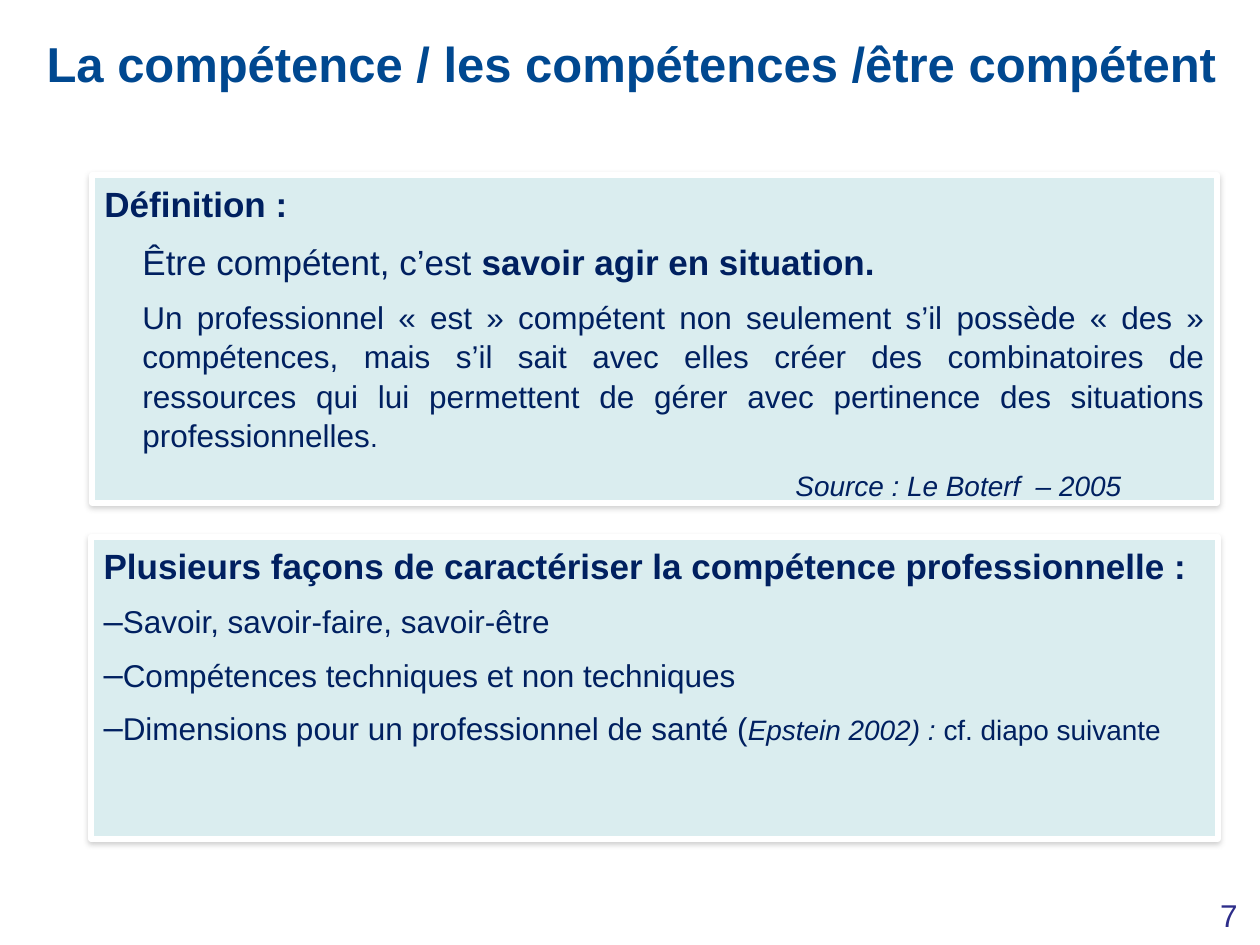
from lxml.etree import SubElement
from pptx import Presentation
from pptx.dml.color import RGBColor
from pptx.enum.shapes import MSO_SHAPE as Shape
from pptx.enum.text import MSO_ANCHOR as Anchor, MSO_AUTO_SIZE as AutoSize, PP_ALIGN as Align
from pptx.oxml.ns import qn
from pptx.util import Emu, Pt

COLORS = {
    "title": "004890",
    "text": "002060",
    "number": "2D2D8A",
    "panel": "DAEDEF",
    "border": "FFFFFF",
    "shadow": "808080",
}
PX = 914400 / 126


def px(length):
    return Emu(round(length * PX))


def color(name):
    return RGBColor.from_string(COLORS[name])


class SlideWriter:
    """Holds the style and the current slide."""

    font = "Arial"
    gap = Pt(8)
    line_spacing = 1.04

    def __init__(self, page):
        self.page = page

    def place(self, box, left, top, width, height):
        box.left, box.top = px(left), px(top)
        box.width, box.height = px(width), px(height)

    def style(self, para, size, color_name, bold=None, align=Align.LEFT):
        para.alignment = align
        font = para.font
        font.name, font.size, font.bold = self.font, Pt(size), bold
        font.color.rgb = color(color_name)

    def title(self, text, *area):
        box = self.page.shapes.title
        self.place(box, *area)
        frame = box.text_frame
        frame.auto_size = AutoSize.NONE
        frame.vertical_anchor = Anchor.MIDDLE
        frame.text = text
        self.style(frame.paragraphs[0], 28, "title", bold=True)

    def page_number(self, text, *area):
        box = self.page.shapes.add_textbox(*map(px, area))
        frame = box.text_frame
        frame.word_wrap = True
        frame.text = text
        self.style(frame.paragraphs[0], 18, "number", align=Align.RIGHT)

    def shadow(self, box):
        """Give the box a soft grey shadow straight below it."""
        box.shadow.inherit = False
        effects = box._element.spPr.find(qn("a:effectLst"))
        outer = SubElement(effects, qn("a:outerShdw"), blurRad=str(Pt(3.1)),
                           dist=str(Pt(1.6)), dir="5400000", rotWithShape="0")
        tint = SubElement(outer, qn("a:srgbClr"), val=COLORS["shadow"])
        SubElement(tint, qn("a:alpha"), val="38000")

    def panel(self, box, *area):
        """Style a shape or placeholder as a framed panel; return its text frame."""
        self.place(box, *area)
        box.fill.solid()
        box.fill.fore_color.rgb = color("panel")
        box.line.color.rgb = color("border")
        box.line.width = Pt(3)
        self.shadow(box)
        frame = box.text_frame
        frame.word_wrap = True
        frame.auto_size = AutoSize.NONE
        frame.vertical_anchor = Anchor.TOP
        return frame

    def paragraph(self, frame, spans, size, indent=0, dash=False, align=Align.LEFT):
        """Add a paragraph; each span is a text and a dict of font settings."""
        first = not frame.paragraphs[0].runs
        para = frame.paragraphs[0] if first else frame.add_paragraph()
        props = para._p.get_or_add_pPr()
        props.set("marL", str(px(indent)))
        props.set("indent", "0")
        if dash:
            tint = SubElement(props, qn("a:buClr"))
            SubElement(tint, qn("a:srgbClr"), val=COLORS["text"])
            SubElement(props, qn("a:buSzPct"), val="110000")
            SubElement(props, qn("a:buFont"), typeface=self.font)
            SubElement(props, qn("a:buChar"), char="–")
        else:
            SubElement(props, qn("a:buNone"))
        para.line_spacing = self.line_spacing
        para.space_before = Pt(0) if first else self.gap
        self.style(para, size, "text", align=align)
        for text, settings in spans:
            span = para.add_run()
            span.text = text
            for name, value in settings.items():
                setattr(span.font, name, value)


def main():
    deck = Presentation()
    deck.slide_width, deck.slide_height = px(1260), px(945)
    page = deck.slides.add_slide(deck.slide_layouts[1])
    writer = SlideWriter(page)
    bold = {"bold": True}

    writer.title("La compétence / les compétences /être compétent", 34, 0, 1226, 125)
    writer.page_number("7", 1186, 890, 64, 55)

    definition_box = page.shapes.add_shape(Shape.RECTANGLE, 0, 0, 0, 0)
    definition = writer.panel(definition_box, 92, 175, 1125, 328)
    writer.paragraph(definition, [("Définition :", bold)], 20)
    writer.paragraph(definition, [
        ("Être compétent, c’est ", {}),
        ("savoir agir en situation.", bold),
    ], 20, indent=38)
    writer.paragraph(definition, [
        ("Un professionnel « est » compétent non seulement s’il possède « des » "
         "compétences, mais s’il sait avec elles créer des combinatoires de "
         "ressources qui lui permettent de gérer avec pertinence des situations "
         "professionnelles", {}),
        (".", {"size": Pt(16)}),
    ], 18, indent=38, align=Align.JUSTIFY)
    writer.paragraph(definition, [("Source : Le Boterf  – 2005", {"italic": True})],
                     16, indent=691)

    approaches = writer.panel(page.placeholders[1], 91, 537, 1127, 302)
    writer.paragraph(approaches, [
        ("Plusieurs façons de caractériser la compétence professionnelle :", bold),
    ], 20)
    small = {"size": Pt(16)}
    for spans in (
        [("Savoir, savoir-faire, savoir-être", {})],
        [("Compétences techniques et non techniques", {})],
        [("Dimensions pour un professionnel de santé (", {}),
         ("Epstein 2002) : ", {**small, "italic": True}),
         ("cf. diapo suivante", small)],
    ):
        writer.paragraph(approaches, spans, 18, dash=True)

    deck.save("out.pptx")


if __name__ == "__main__":
    main()
